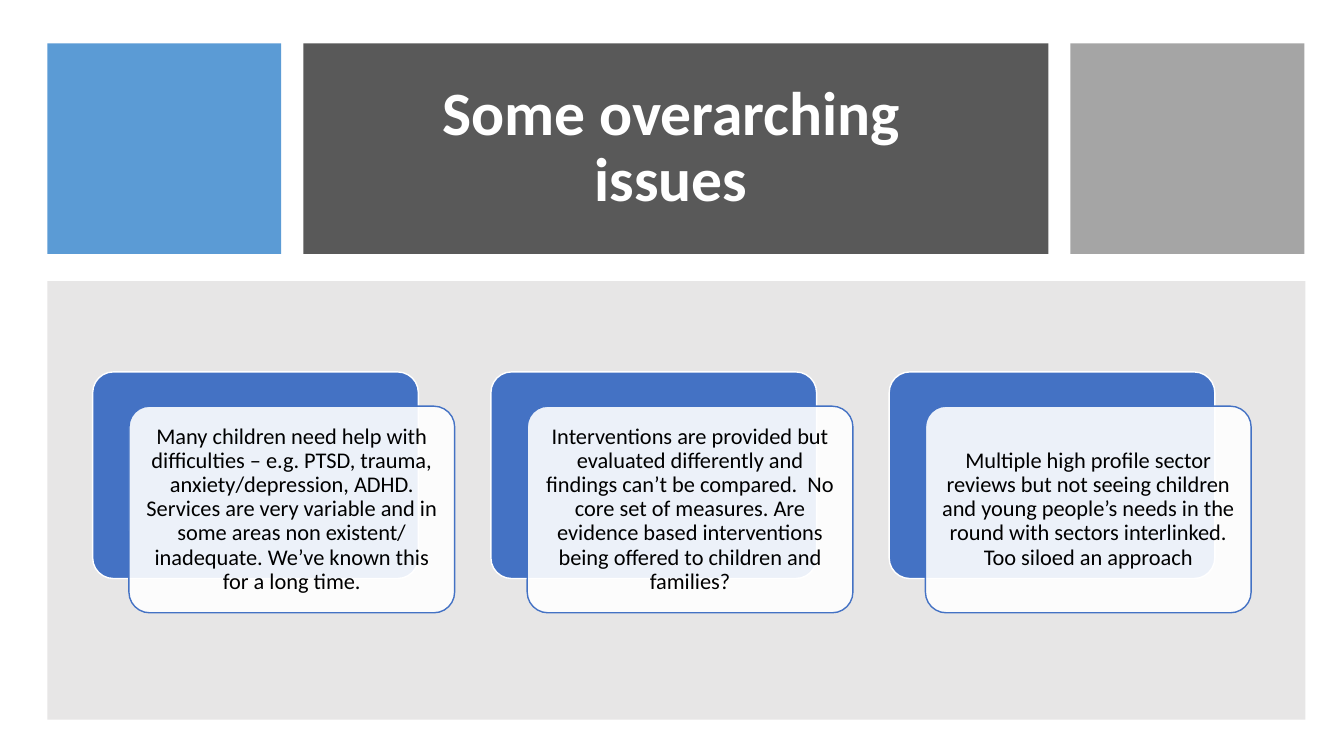
"""Build a slide of overarching issues: a title band above three layered cards."""
from dataclasses import dataclass

from lxml.etree import SubElement as Sub
from pptx import Presentation as Deck
from pptx.dml.color import RGBColor as Rgb
from pptx.enum.shapes import MSO_SHAPE as Kind
from pptx.enum.text import MSO_ANCHOR as Anchor, MSO_AUTO_SIZE as Fit, PP_ALIGN as Align
from pptx.oxml.ns import qn
from pptx.util import Inches, Pt


@dataclass(frozen=True)
class Theme:
    dark: str = "595959"
    sky: str = "5B9BD5"
    grey: str = "A5A5A5"
    pale: str = "E7E6E6"
    blue: str = "4472C4"
    white: str = "FFFFFF"
    black: str = "000000"
    font: str = "Calibri"
    head: int = 44
    body: int = 16


look = Theme()
deck = Deck()
deck.slide_width, deck.slide_height = Inches(13.33), Inches(7.5)
col, row = deck.slide_width / 100, deck.slide_height / 100
slide = deck.slides.add_slide(deck.slide_layouts[5])
title = slide.shapes.title


def box(kind, left, top, wide, high, fill, line=None):
    shape = slide.shapes.add_shape(
        kind, int(left * col), int(top * row), int(wide * col), int(high * row))
    shape.shadow.inherit = False
    shape.fill.solid()
    shape.fill.fore_color.rgb = Rgb.from_string(fill)
    if line:
        shape.adjustments[0] = 0.1
        shape.line.color.rgb = Rgb.from_string(line)
        shape.line.width = Pt(1)
    else:
        shape.line.fill.background()
    return shape


def write(shape, text, size, color, bold=False, inset=0.1):
    frame = shape.text_frame
    frame.text = text
    frame.word_wrap = True
    frame.auto_size = Fit.NONE
    frame.vertical_anchor = Anchor.MIDDLE
    frame.margin_left = frame.margin_right = Inches(inset)
    frame.margin_top = frame.margin_bottom = Inches(min(inset, 0.07))
    para = frame.paragraphs[0]
    para.alignment = Align.CENTER
    para.line_spacing = 0.9
    font = para.runs[0].font
    font.name, font.size, font.bold = look.font, Pt(size), bold
    font.color.rgb = Rgb.from_string(color)


edge, band, tall = 3.53, 5.73, 27.87
panels = [
    (22.58, band, 55.43, tall, look.dark),
    (edge, band, 17.4, tall, look.sky),
    (79.65, band, 17.4, tall, look.grey),
    (edge, 37.2, 93.6, 58, look.pale),
]
for panel in panels:
    title.element.addprevious(box(Kind.RECTANGLE, *panel).element)

title.left, title.top = int(26.48 * col), int(10 * row)
title.width, title.height = int(46.95 * col), int(19.33 * row)
write(title, "Some overarching issues", look.head, look.white, bold=True)

issues = [
    "Many children need help with difficulties – e.g. PTSD, trauma, "
    "anxiety/depression, ADHD. Services are very variable and in some areas "
    "non existent/ inadequate. We’ve known this for a long time.",
    "Interventions are provided but evaluated differently and findings can’t "
    "be compared.  No core set of measures. Are evidence based interventions "
    "being offered to children and families?",
    "Multiple high profile sector reviews but not seeing children and young "
    "people’s needs in the round with sectors interlinked. Too siloed an approach",
]
left, top, step, size = 6.9, 49.2, 29.63, (24.23, 27.33)
for index, issue in enumerate(issues):
    start = left + index * step
    box(Kind.ROUNDED_RECTANGLE, start, top, *size, look.blue, look.white)
    card = box(Kind.ROUNDED_RECTANGLE, start + 2.7, top + 4.53, *size,
               look.white, look.blue)
    tint = card.element.spPr.find(qn("a:solidFill")).find(qn("a:srgbClr"))
    Sub(tint, qn("a:alpha"), val="90000")
    write(card, issue, look.body, look.black, inset=0.07)

deck.save("out.pptx")
